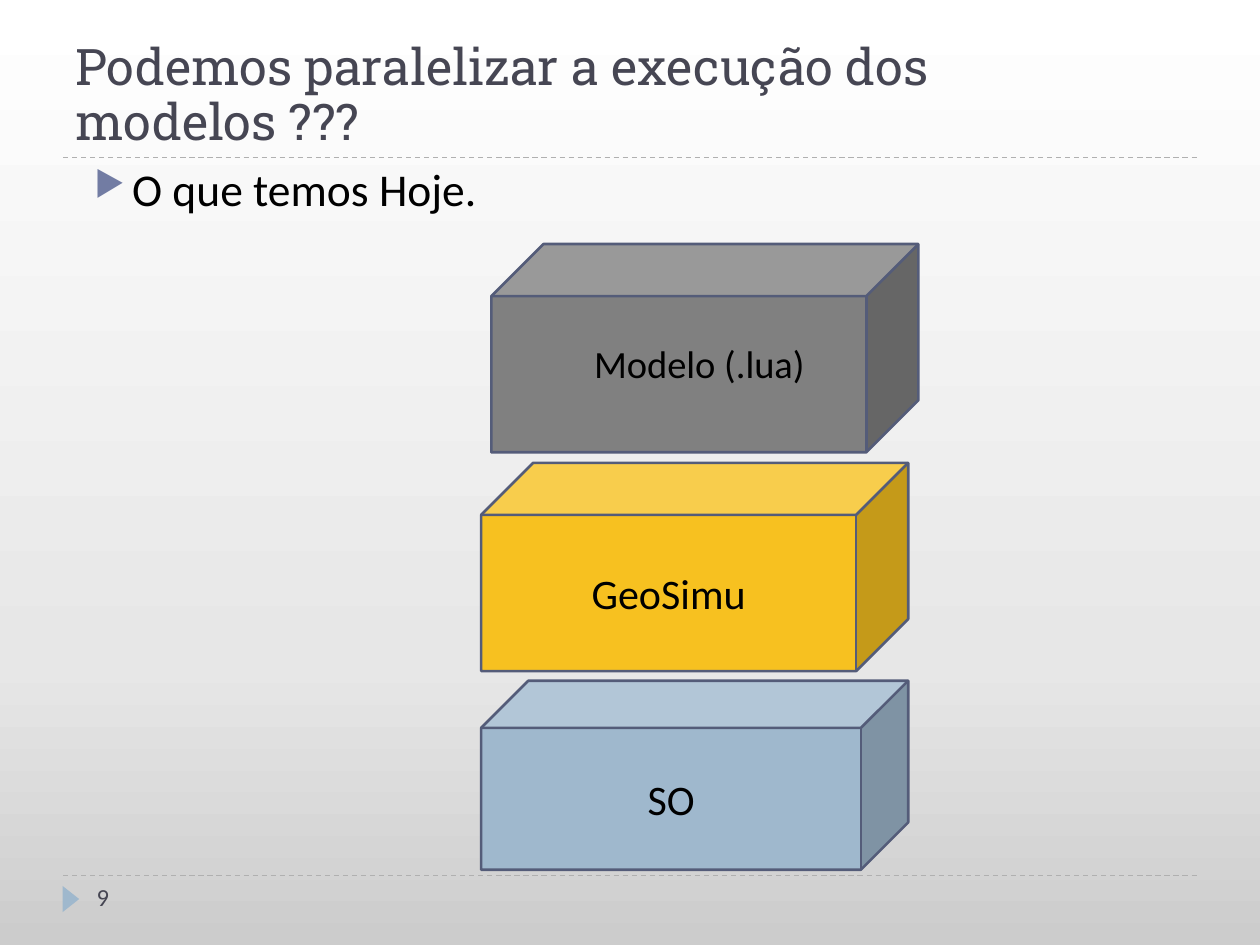
"""Build a slide that shows today's software stack as three stacked cubes."""
from copy import deepcopy

from lxml import etree
from pptx import Presentation
from pptx.dml.color import RGBColor
from pptx.enum.dml import MSO_LINE
from pptx.enum.shapes import MSO_CONNECTOR, MSO_SHAPE
from pptx.enum.text import MSO_ANCHOR, PP_ALIGN
from pptx.oxml.ns import qn
from pptx.util import Pt

STRAIGHT, DASH = MSO_CONNECTOR.STRAIGHT, MSO_LINE.DASH
CUBE, TRIANGLE = MSO_SHAPE.CUBE, MSO_SHAPE.ISOSCELES_TRIANGLE
TOP, MIDDLE, BOTTOM = MSO_ANCHOR.TOP, MSO_ANCHOR.MIDDLE, MSO_ANCHOR.BOTTOM
LEFT, CENTER = PP_ALIGN.LEFT, PP_ALIGN.CENTER

COLORS = {
    "title": "464653", "text": "000000", "bullet": "727CA3", "rule": "B0B0B0",
    "marker": "9FB8CD", "edge": "545C79", "model": "808080",
    "platform": "F7C120", "system": "9FB8CD",
}
BACKGROUND = [(0, "CCCCCC"), (0.3, "E7E7E7"), (1, "FFFFFF")]
TITLE = "Podemos paralelizar a execução dos modelos ???"
BULLET = "O que temos Hoje."
MODEL_LABEL = "Modelo (.lua)"
PAGE_NUMBER = "9"
CUBES = [
    ("", "model", (280.8, 139.5, 244, 119)),
    ("GeoSimu", "platform", (275, 264.5, 244, 119)),
    ("SO", "system", (275, 389, 244, 108)),
]
RULE_TOPS = (90, 500.4)
RULE_LEFT, RULE_RIGHT = 36, 684


def color(name):
    return RGBColor.from_string(COLORS[name])


def points(place):
    return [Pt(value) for value in place]


def write(shape, text, size, tone="text", font="Calibri", align=LEFT, anchor=TOP):
    frame = shape.text_frame
    frame.word_wrap = True
    frame.vertical_anchor = anchor
    para = frame.paragraphs[0]
    para.alignment = align
    span = para.add_run()
    span.text = text
    for name, value in {"name": font, "size": Pt(size), "bold": False}.items():
        setattr(span.font, name, value)
    span.font.color.rgb = color(tone)
    return para


def add_text(page, place, text, size, **style):
    box = page.shapes.add_textbox(*points(place))
    return write(box, text, size, **style)


def add_solid(page, kind, place, fill):
    shape = page.shapes.add_shape(kind, *points(place))
    shape.shadow.inherit = False
    shape.fill.solid()
    shape.fill.fore_color.rgb = color(fill)
    return shape


def add_rule(page, top):
    rule = page.shapes.add_connector(STRAIGHT, *points((RULE_LEFT, top, RULE_RIGHT, top)))
    rule.line.color.rgb = color("rule")
    rule.line.width = Pt(0.75)
    rule.line.dash_style = DASH
    etree.SubElement(rule._element.spPr, qn("a:effectLst"))


def paint_background(page):
    fill = page.background.fill
    fill.gradient()
    fill.gradient_angle = 90
    stops = page._element.find(".//" + qn("a:gsLst"))
    stops.insert(1, deepcopy(stops[0]))
    for stop, (position, tone) in zip(fill.gradient_stops, BACKGROUND):
        stop.position = position
        stop.color.rgb = RGBColor.from_string(tone)


def add_bullet(para):
    properties = para._p.get_or_add_pPr()
    properties.set("marL", str(Pt(21.6)))
    properties.set("indent", str(Pt(-21.6)))
    tone = etree.SubElement(properties, qn("a:buClr"))
    etree.SubElement(tone, qn("a:srgbClr"), val=COLORS["bullet"])
    etree.SubElement(properties, qn("a:buSzPct"), val="76000")
    etree.SubElement(properties, qn("a:buChar"), char="▶")


def main():
    deck = Presentation()
    deck.slide_width, deck.slide_height = Pt(720), Pt(540)
    page = deck.slides.add_slide(deck.slide_layouts[5])
    paint_background(page)
    for top in RULE_TOPS:
        add_rule(page, top)
    marker = add_solid(page, TRIANGLE, (33, 509, 15, 9.5), "marker")
    marker.rotation = 90
    marker.line.fill.background()

    title = page.shapes.title
    title.left, title.top, title.width, title.height = points((36, 12, 648, 78))
    title.text_frame.margin_right = Pt(72)
    heading = write(title, TITLE, 28.8, "title", "Roboto Slab", anchor=BOTTOM)
    heading.line_spacing = 0.9

    bullet = add_text(page, (46.8, 88.5, 648, 389), BULLET, 26)
    bullet.space_before = Pt(6)
    add_bullet(bullet)

    for label, fill, place in CUBES:
        cube = add_solid(page, CUBE, place, fill)
        cube.line.color.rgb = color("edge")
        cube.line.width = Pt(1.5)
        if label:
            write(cube, label, 24, align=CENTER, anchor=MIDDLE)
    add_text(page, (292.3, 190.8, 214.6, 33.8), MODEL_LABEL, 22, align=CENTER)
    add_text(page, (48.2, 500.4, 156, 28.8), PAGE_NUMBER, 14, tone="title")
    deck.save("out.pptx")


if __name__ == "__main__":
    main()
